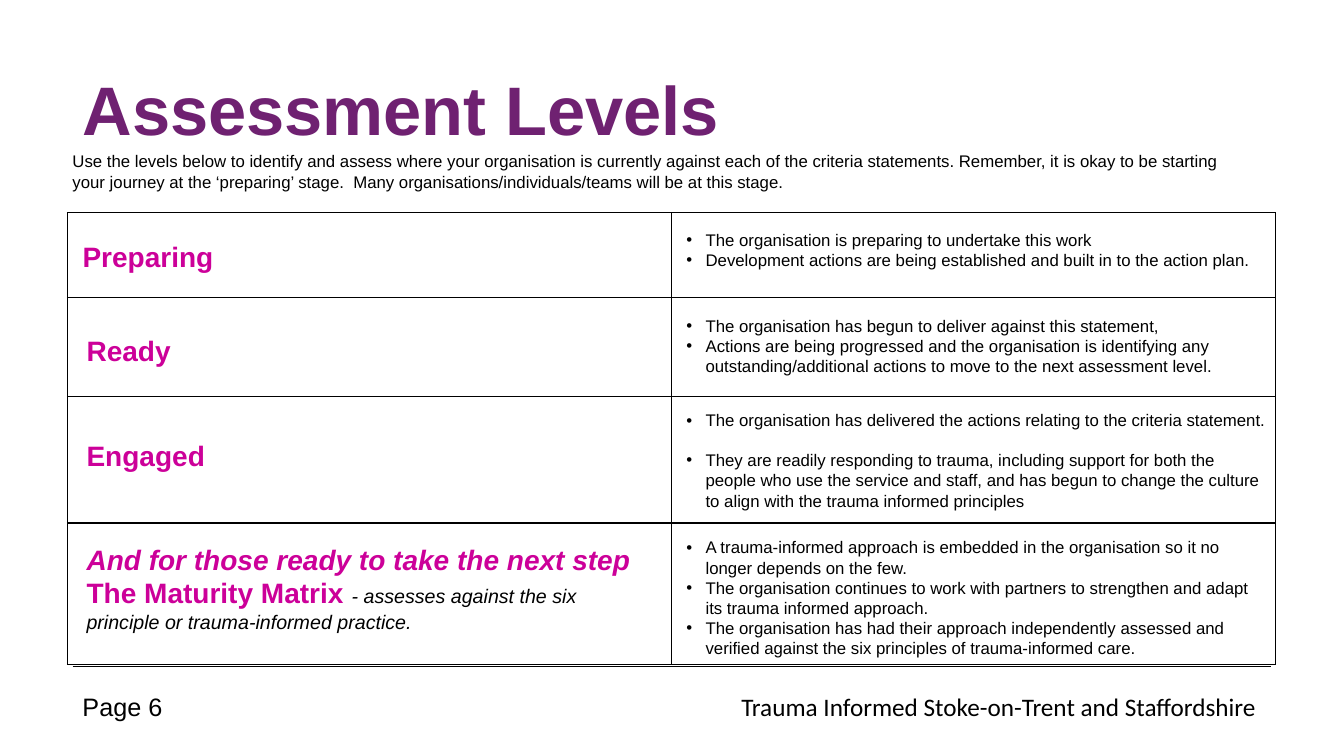
from lxml import etree
from pptx import Presentation
from pptx.dml.color import RGBColor
from pptx.enum.shapes import MSO_CONNECTOR
from pptx.enum.text import MSO_ANCHOR, MSO_AUTO_SIZE, PP_ALIGN
from pptx.oxml.ns import qn
from pptx.util import Inches, Pt

LEFT, RIGHT = PP_ALIGN.LEFT, PP_ALIGN.RIGHT
COLORS = {"black": "000000", "purple": "6F2171", "magenta": "CC0099"}
BULLET_INDENT = 0.19
TITLE_ONLY = 5


def write(paragraph, text, size=12, font="Arial", color="black", bold=False,
          italic=False, align=LEFT, bullet=False):
    paragraph.alignment = align
    run = paragraph.add_run()
    run.text = text
    run.font.size = Pt(size)
    run.font.name = font
    run.font.bold = bold
    run.font.italic = italic
    run.font.color.rgb = RGBColor.from_string(COLORS[color])
    if bullet:
        properties = paragraph._p.get_or_add_pPr()
        properties.set("marL", str(Inches(BULLET_INDENT)))
        properties.set("indent", str(-Inches(BULLET_INDENT)))
        etree.SubElement(properties, qn("a:buFont"), typeface="Arial")
        etree.SubElement(properties, qn("a:buChar"), char="•")


def add_text_frame(left, top, width, height, wrap=True):
    box = slide.shapes.add_textbox(Inches(left), Inches(top), Inches(width), Inches(height))
    box.text_frame.word_wrap = wrap
    box.text_frame.auto_size = MSO_AUTO_SIZE.SHAPE_TO_FIT_TEXT
    return box.text_frame


presentation = Presentation()
presentation.slide_width = Inches(13.33)
presentation.slide_height = Inches(7.5)
slide = presentation.slides.add_slide(presentation.slide_layouts[TITLE_ONLY])

# Empty grid behind the levels
row_heights = [0.84, 0.98, 1.26, 1.4]
table = slide.shapes.add_table(len(row_heights), 2, Inches(0.67), Inches(2.11),
                               Inches(11.98), Inches(sum(row_heights))).table
table.first_row = False
table.horz_banding = False
for row, height in zip(table.rows, row_heights):
    row.height = Inches(height)
for cell in table.iter_cells():
    properties = cell._tc.get_or_add_tcPr()
    for side in ("a:lnL", "a:lnR", "a:lnT", "a:lnB"):
        border = etree.SubElement(properties, qn(side), w=str(Pt(1)))
        border_fill = etree.SubElement(border, qn("a:solidFill"))
        etree.SubElement(border_fill, qn("a:srgbClr"), val=COLORS["black"])
    cell.fill.background()

# Title and introduction
title = slide.shapes.title
title.left, title.top, title.width, title.height = map(Inches, (0.72, 0.4, 11.69, 1.45))
title.text_frame.vertical_anchor = MSO_ANCHOR.MIDDLE
title_paragraph = title.text_frame.paragraphs[0]
title_paragraph.line_spacing = 0.9
write(title_paragraph, "Assessment Levels", size=49, color="purple", bold=True)

introduction = add_text_frame(0.62, 1.45, 11.89, 0.5)
write(introduction.paragraphs[0],
      "Use the levels below to identify and assess where your organisation is currently "
      "against each of the criteria statements. Remember, it is okay to be starting your "
      "journey at the ‘preparing’ stage.  Many organisations/individuals/teams will be at "
      "this stage.")

# Level names
for name, left, top, width in [("Preparing", 0.72, 2.33, 1.51),
                               ("Ready", 0.76, 3.26, 1.05),
                               ("Engaged", 0.76, 4.3, 1.39)]:
    level = add_text_frame(left, top, width, 0.44, wrap=False)
    write(level.paragraphs[0], name, size=20, color="magenta", bold=True)

matrix = add_text_frame(0.76, 5.33, 5.71, 1.01)
write(matrix.paragraphs[0], "And for those ready to take the next step",
      size=20, color="magenta", bold=True, italic=True)
matrix_paragraph = matrix.add_paragraph()
write(matrix_paragraph, "The Maturity Matrix ", size=20, color="magenta", bold=True)
write(matrix_paragraph, "- assesses against the six principle or trauma-informed practice.",
      size=14, italic=True)

# Level descriptions: top, width, height, gap after each bullet, bullets
descriptions = [
    (2.23, 6.67, 0.5, 0, [
        "The organisation is preparing to undertake this work",
        "Development actions are being established and built in to the action plan."]),
    (3.08, 6.17, 0.71, 0, [
        "The organisation has begun to deliver against this statement,",
        "Actions are being progressed and the organisation is identifying any "
        "outstanding/additional actions to move to the next assessment level."]),
    (4.02, 5.96, 0.91, 14, [
        "The organisation has delivered the actions relating to the criteria statement.",
        "They are readily responding to trauma, including support for both the people who "
        "use the service and staff, and has begun to change the culture to align with the "
        "trauma informed principles"]),
    (5.28, 5.94, 1.31, 0, [
        "A trauma-informed approach is embedded in the organisation so it no longer "
        "depends on the few.",
        "The organisation continues to work with partners to strengthen and adapt its "
        "trauma informed approach.",
        "The organisation has had their approach independently assessed and verified "
        "against the six principles of trauma-informed care."]),
]
for top, width, height, gap, bullets in descriptions:
    description = add_text_frame(6.71, top, width, height)
    for index, text in enumerate(bullets):
        paragraph = description.add_paragraph() if index else description.paragraphs[0]
        paragraph.space_after = Pt(gap)
        write(paragraph, text, bullet=True)

# Footer
rule = slide.shapes.add_connector(MSO_CONNECTOR.STRAIGHT, Inches(0.72), Inches(6.61),
                                  Inches(12.61), Inches(6.61))
rule.line.width = Pt(0.5)
rule.line.color.rgb = RGBColor.from_string(COLORS["black"])
etree.SubElement(rule._element.spPr, qn("a:effectLst"))

page = add_text_frame(0.72, 6.81, 1.2, 0.4)
write(page.paragraphs[0], "Page 6", size=18)
footer = add_text_frame(7.23, 6.81, 5.38, 0.4)
write(footer.paragraphs[0], "Trauma Informed Stoke-on-Trent and Staffordshire ",
      size=18, font="Calibri", align=RIGHT)

presentation.save("out.pptx")
